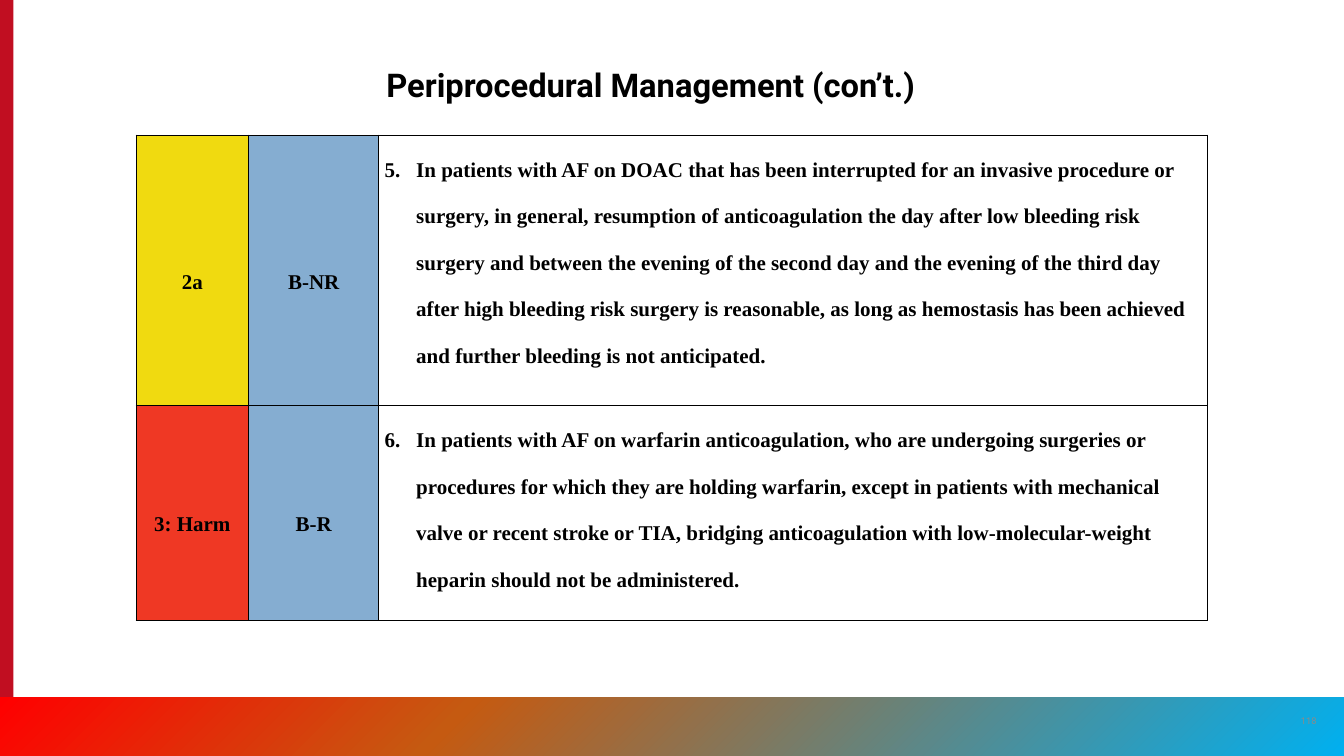
from copy import deepcopy
from pptx import Presentation
from pptx.dml.color import RGBColor
from pptx.enum import shapes, text
from pptx.oxml import parse_xml
from pptx.oxml.ns import nsdecls
from pptx.util import Pt

# Content
TITLE = "Periprocedural Management (con’t.)"
PAGE = "118"
FIRST = 5
ROWS = [
    ("2a", "B-NR",
     "In patients with AF on DOAC that has been interrupted for an invasive "
     "procedure or surgery, in general, resumption of anticoagulation the day "
     "after low bleeding risk surgery and between the evening of the second day "
     "and the evening of the third day after high bleeding risk surgery is "
     "reasonable, as long as hemostasis has been achieved and further bleeding "
     "is not anticipated."),
    ("3: Harm", "B-R",
     "In patients with AF on warfarin anticoagulation, who are undergoing "
     "surgeries or procedures for which they are holding warfarin, except in "
     "patients with mechanical valve or recent stroke or TIA, bridging "
     "anticoagulation with low-molecular-weight heparin should not be "
     "administered."),
]

# Theme and layout, in points
THEME = {
    "head": {"name": "Roboto", "size": Pt(28), "bold": True, "color": "000000"},
    "cell": {"name": "Times New Roman", "size": Pt(18), "bold": True, "color": "000000"},
    "page": {"name": "Roboto", "size": Pt(8), "bold": False, "color": "8A8B8A"},
    "bar": "C10E21",
    "band": [(0, "00B0F0"), (0.66, "C55A11"), (1, "FF0000")],
    "class": ["F0DA10", "EF3824"],
    "level": "85ADD1",
    "rule": "000000",
}
WIDE, HIGH = 1152, 648
BAND = 50.4
COLS = [96.48, 111.6, 710.64]
TALL = [231.84, 184.32]
LEFT, TOP = 116.64, 115.92
HANG = 27
ALIGN, ANCHOR = text.PP_ALIGN, text.MSO_ANCHOR


def put(obj, **vals):
    for key, val in vals.items():
        setattr(obj, key, val)


def write(par, words, style, **vals):
    put(par, **vals)
    run = par.add_run()
    run.text = words
    for key, val in THEME[style].items():
        if key == "color":
            run.font.color.rgb = RGBColor.from_string(val)
        else:
            setattr(run.font, key, val)


def paint(obj, color):
    obj.fill.solid()
    obj.fill.fore_color.rgb = RGBColor.from_string(color)


def block(slide, x, y, w, h):
    shape = slide.shapes.add_shape(
        shapes.MSO_SHAPE.RECTANGLE, Pt(x), Pt(y), Pt(w), Pt(h))
    shape.shadow.inherit = False
    shape.line.fill.background()
    return shape


def frame(cell):
    props = cell._tc.get_or_add_tcPr()
    for spot, side in enumerate("LRTB"):
        props.insert(spot, parse_xml(
            f'<a:ln{side} {nsdecls("a")} w="{Pt(1)}"><a:solidFill>'
            f'<a:srgbClr val="{THEME["rule"]}"/></a:solidFill></a:ln{side}>'))


def number(par, start):
    props = par._p.get_or_add_pPr()
    props.set("marL", str(Pt(HANG)))
    props.set("indent", str(-Pt(HANG)))
    props.append(parse_xml(
        f'<a:buAutoNum {nsdecls("a")} type="arabicPeriod" startAt="{start}"/>'))


def backdrop(slide):
    # Side bar
    paint(block(slide, 0, 0, 11.52, HIGH), THEME["bar"])

    # Gradient band
    band = block(slide, 0, HIGH - BAND, WIDE, BAND)
    band.rotation = 180
    band.fill.gradient()
    band.fill.gradient_angle = 315
    stops = band._element.spPr.find(".//{*}gsLst")
    stops.append(deepcopy(stops[0]))
    for stop, (place, color) in zip(band.fill.gradient_stops, THEME["band"]):
        stop.position = place
        stop.color.rgb = RGBColor.from_string(color)

    # Page number
    box = slide.shapes.add_textbox(Pt(1104.48), Pt(600.48), Pt(34.56), Pt(34.56))
    put(box.text_frame, word_wrap=True, vertical_anchor=ANCHOR.MIDDLE)
    write(box.text_frame.paragraphs[0], PAGE, "page", alignment=ALIGN.CENTER)


def heading(slide):
    title = slide.shapes.title
    put(title, left=Pt(324), top=Pt(54), width=Pt(504), height=Pt(38.88))
    put(title.text_frame, word_wrap=True, auto_size=text.MSO_AUTO_SIZE.NONE,
        vertical_anchor=ANCHOR.BOTTOM)
    write(title.text_frame.paragraphs[0], TITLE, "head",
          alignment=ALIGN.LEFT, line_spacing=0.9)


def advice(slide):
    table = slide.shapes.add_table(
        len(ROWS), len(COLS), Pt(LEFT), Pt(TOP), Pt(sum(COLS)), Pt(sum(TALL))).table
    put(table, first_row=False, horz_banding=False)
    for col, width in zip(table.columns, COLS):
        col.width = Pt(width)
    for r, row in enumerate(ROWS):
        table.rows[r].height = Pt(TALL[r])
        fills = [THEME["class"][r], THEME["level"], None]
        for c, (words, fill) in enumerate(zip(row, fills)):
            cell = table.cell(r, c)
            put(cell, margin_left=Pt(5.04), margin_right=Pt(5.04),
                margin_top=0, margin_bottom=0,
                vertical_anchor=ANCHOR.MIDDLE if fill else ANCHOR.TOP)
            par = cell.text_frame.paragraphs[0]
            if fill:
                paint(cell, fill)
            else:
                cell.fill.background()
                number(par, FIRST + r)
            frame(cell)
            write(par, words, "cell", line_spacing=2.0,
                  alignment=ALIGN.CENTER if fill else ALIGN.LEFT)


def main():
    deck = Presentation()
    put(deck, slide_width=Pt(WIDE), slide_height=Pt(HIGH))
    slide = deck.slides.add_slide(deck.slide_layouts[5])
    backdrop(slide)
    heading(slide)
    advice(slide)
    deck.save("out.pptx")


if __name__ == "__main__":
    main()
